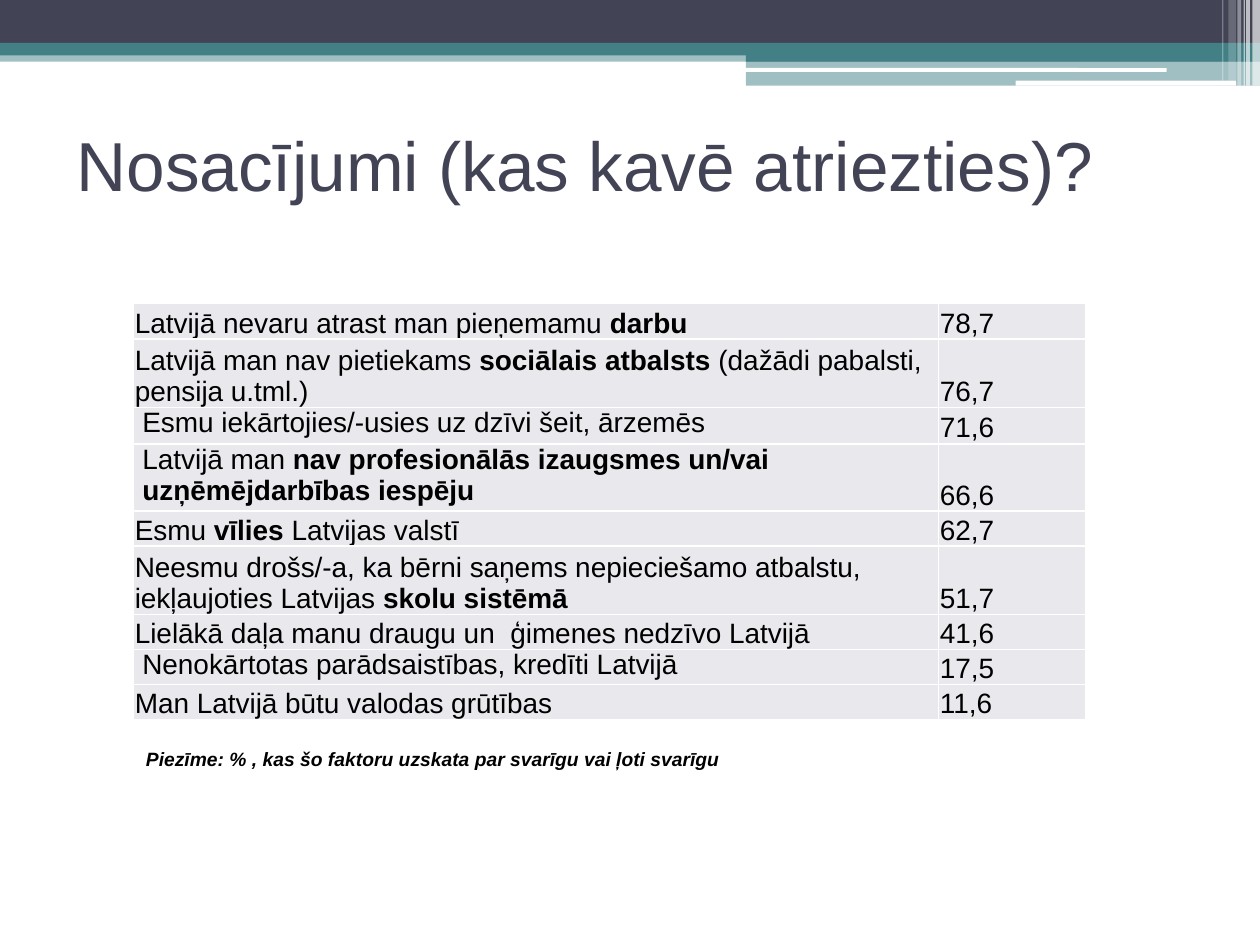
from dataclasses import dataclass

from lxml import etree
from pptx import Presentation
from pptx import util as u
from pptx.dml.color import RGBColor
from pptx.enum import shapes, text
from pptx.oxml.ns import qn

Inches, Pt = u.Inches, u.Pt


@dataclass(frozen=True)
class Theme:
    font: str = "Arial"
    dark: str = "424456"
    teal: str = "438086"
    white: str = "FFFFFF"
    black: str = "000000"
    cell: str = "E9E9ED"
    title_size: float = 39.6
    table_size: float = 16
    note_size: float = 11


theme = Theme()


def add_runs(tf, marked, size, color, **formats):
    """Write text into the frame's first paragraph; *...* marks bold words."""
    for i, part in enumerate(marked.split("*")):
        if part:
            r = tf.paragraphs[0].add_run()
            r.text = part
            r.font.color.rgb = RGBColor.from_string(color)
            values = {"name": theme.font, "size": Pt(size), "bold": i % 2 == 1, **formats}
            for name, value in values.items():
                setattr(r.font, name, value)


prs = Presentation()
prs.slide_width, prs.slide_height = Inches(10), Inches(7.5)
s = prs.slides.add_slide(prs.slide_layouts[6])

# Header bands, back to front: left, top, width, height, colour, opacity %
RECT, ROUND = shapes.MSO_SHAPE.RECTANGLE, shapes.MSO_SHAPE.ROUNDED_RECTANGLE
bands = [
    (RECT, 0, 0.4, 10, 0.09, theme.teal, 50),
    (RECT, 0, 0, 10, 0.34, theme.dark, 100),
    (RECT, 0, 0.34, 10, 0.1, theme.teal, 100),
    (RECT, 5.92, 0.39, 4.08, 0.1, theme.teal, 100),
    (RECT, 5.92, 0.48, 4.08, 0.2, theme.teal, 50),
    (ROUND, 5.91, 0.54, 3.35, 0.03, theme.white, 100),
    (ROUND, 8.06, 0.64, 1.75, 0.04, theme.white, 100),
]
# Pale vertical stripes at the right edge: left, width, height, opacity %
stripes = [
    (9.94, 0.06, 0.68, 65),
    (9.89, 0.03, 0.68, 65),
    (9.87, 0.01, 0.68, 60),
    (9.82, 0.03, 0.68, 40),
    (9.75, 0.06, 0.64, 20),
    (9.7, 0.01, 0.64, 30),
]
bands += [(RECT, x, 0, w, h, theme.white, opacity) for x, w, h, opacity in stripes]

for kind, x, y, w, h, color, opacity in bands:
    sp = s.shapes.add_shape(kind, Inches(x), Inches(y), Inches(w), Inches(h))
    sp.shadow.inherit = False
    sp.line.fill.background()
    sp.fill.solid()
    sp.fill.fore_color.rgb = RGBColor.from_string(color)
    if opacity < 100:
        rgb = sp.fill._xPr.find(f".//{qn('a:srgbClr')}")
        etree.SubElement(rgb, qn("a:alpha"), val=str(opacity * 1000))

# Title and footnote
MIDDLE, TOP = text.MSO_ANCHOR.MIDDLE, text.MSO_ANCHOR.TOP
texts = [
    (0.51, 0.76, 9, 1.08, MIDDLE, "Nosacījumi (kas kavē atriezties)?",
     theme.title_size, theme.dark, {}),
    (1.06, 5.88, 5.39, 0.29, TOP,
     "Piezīme: % , kas šo faktoru uzskata par svarīgu vai ļoti svarīgu",
     theme.note_size, theme.black, {"bold": True, "italic": True}),
]
for x, y, w, h, anchor, words, size, color, formats in texts:
    tf = s.shapes.add_textbox(Inches(x), Inches(y), Inches(w), Inches(h)).text_frame
    tf.word_wrap = True
    tf.vertical_anchor = anchor
    add_runs(tf, words, size, color, **formats)

# Table of factors: row height, factor, share in %, factor is indented
factors = [
    (0.28, "Latvijā nevaru atrast man pieņemamu *darbu*", "78,7", False),
    (0.52, "Latvijā man nav pietiekams *sociālais atbalsts* (dažādi pabalsti, pensija u.tml.)",
     "76,7", False),
    (0.29, "Esmu iekārtojies/-usies uz dzīvi šeit, ārzemēs", "71,6", True),
    (0.49, "Latvijā man *nav profesionālās izaugsmes un/vai uzņēmējdarbības iespēju*",
     "66,6", True),
    (0.26, "Esmu *vīlies* Latvijas valstī", "62,7", False),
    (0.5, "Neesmu drošs/-a, ka bērni saņems nepieciešamo atbalstu, "
     "iekļaujoties Latvijas *skolu sistēmā*", "51,7", False),
    (0.28, "Lielākā daļa manu draugu un  ģimenes nedzīvo Latvijā", "41,6", False),
    (0.25, "Nenokārtotas parādsaistības, kredīti Latvijā", "17,5", True),
    (0.25, "Man Latvijā būtu valodas grūtības", "11,6", False),
]
col_widths = (6.39, 1.17)
table = s.shapes.add_table(
    len(factors), len(col_widths), Inches(1.06), Inches(2.41),
    Inches(sum(col_widths)), Inches(sum(row[0] for row in factors))).table
table.first_row = table.horz_banding = False
for column, width in zip(table.columns, col_widths):
    column.width = Inches(width)

for row, (height, factor, share, indented) in zip(table.rows, factors):
    row.height = Inches(height)
    for cell, words, inset in zip(row.cells, (factor, share), (indented, False)):
        side, top = (0.07, 0) if inset else (0.01, 0.01)
        formats = {
            "margin_left": Inches(side),
            "margin_right": Inches(side),
            "margin_top": Inches(top),
            "margin_bottom": 0,
            "vertical_anchor": TOP if inset else text.MSO_ANCHOR.BOTTOM,
        }
        for name, value in formats.items():
            setattr(cell, name, value)
        add_runs(cell.text_frame, words, theme.table_size, theme.black)
        cell.fill.solid()
        cell.fill.fore_color.rgb = RGBColor.from_string(theme.cell)
        tcPr = cell._tc.get_or_add_tcPr()
        for i, edge in enumerate(("a:lnL", "a:lnR", "a:lnT", "a:lnB")):
            ln = etree.Element(qn(edge), w=str(Pt(1)))
            fill = etree.SubElement(ln, qn("a:solidFill"))
            etree.SubElement(fill, qn("a:srgbClr"), val=theme.white)
            tcPr.insert(i, ln)

prs.save("out.pptx")
